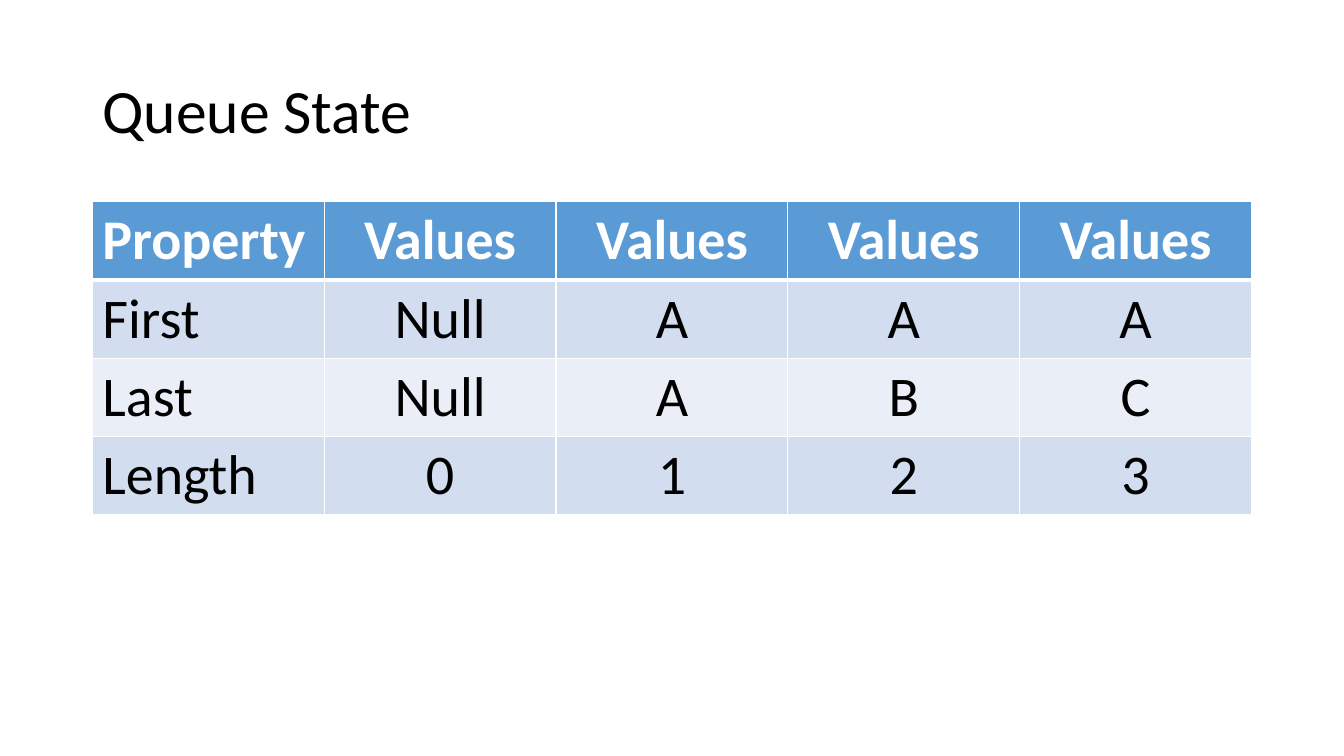
from lxml import etree
from pptx import Presentation
from pptx.dml.color import RGBColor
from pptx.enum.text import MSO_ANCHOR, MSO_AUTO_SIZE, PP_ALIGN
from pptx.oxml.ns import qn
from pptx.util import Pt

LEFT, CENTER = PP_ALIGN.LEFT, PP_ALIGN.CENTER
MIDDLE = MSO_ANCHOR.MIDDLE
NO_AUTOFIT = MSO_AUTO_SIZE.NONE
TITLE_ONLY = 5

FONT = "Calibri"
BLACK, WHITE = "000000", "FFFFFF"
HEADER_FILL = "5B9BD5"
BAND_FILLS = ["D2DEEF", "EAEFF7"]

MARGIN, CONTENT_WIDTH = 66, 828
ROW_HEIGHT = 55.25
QUEUE_STATE = [
    ["Property", "Values", "Values", "Values", "Values"],
    ["First", "Null", "A", "A", "A"],
    ["Last", "Null", "A", "B", "C"],
    ["Length", "0", "1", "2", "3"],
]


def color(hex_code):
    return RGBColor.from_string(hex_code)


def write_text(frame, text, size, hex_code=BLACK, bold=False, align=LEFT, spacing=1.0):
    para = frame.paragraphs[0]
    para.alignment = align
    para.line_spacing = spacing
    span = para.add_run()
    span.text = text
    span.font.name = FONT
    span.font.size = Pt(size)
    span.font.bold = bold
    span.font.color.rgb = color(hex_code)


def set_borders(cell, widths):
    """Draw white cell borders; widths maps L, R, T, B to points."""
    properties = cell._tc.get_or_add_tcPr()
    for side, width in widths.items():
        line = etree.SubElement(properties, qn(f"a:ln{side}"), w=str(Pt(width)))
        fill = etree.SubElement(line, qn("a:solidFill"))
        etree.SubElement(fill, qn("a:srgbClr"), val=WHITE)


def add_title(page, text):
    title = page.shapes.title
    title.left, title.top = Pt(MARGIN), Pt(28.75)
    title.width, title.height = Pt(CONTENT_WIDTH), Pt(104.4)
    frame = title.text_frame
    frame.word_wrap = True
    frame.auto_size = NO_AUTOFIT
    frame.vertical_anchor = MIDDLE
    write_text(frame, text, size=44, spacing=0.9)


def add_banded_table(page, rows):
    table = page.shapes.add_table(
        len(rows), len(rows[0]), Pt(MARGIN), Pt(144),
        Pt(CONTENT_WIDTH), Pt(ROW_HEIGHT * len(rows)),
    ).table
    for row_index, row in enumerate(rows):
        header = row_index == 0
        fill = HEADER_FILL if header else BAND_FILLS[(row_index - 1) % 2]
        # The rule under the header is heavier than the grid
        top = 3 if row_index == 1 else 1
        bottom = 3 if header else 1
        for column_index, text in enumerate(row):
            cell = table.cell(row_index, column_index)
            set_borders(cell, {"L": 1, "R": 1, "T": top, "B": bottom})
            cell.fill.solid()
            cell.fill.fore_color.rgb = color(fill)
            write_text(
                cell.text_frame, text, size=40, bold=header,
                hex_code=WHITE if header else BLACK,
                align=CENTER if column_index else LEFT,
            )


def main():
    deck = Presentation()
    deck.slide_width, deck.slide_height = Pt(960), Pt(540)
    page = deck.slides.add_slide(deck.slide_layouts[TITLE_ONLY])
    add_title(page, "Queue State")
    add_banded_table(page, QUEUE_STATE)
    deck.save("out.pptx")


if __name__ == "__main__":
    main()
